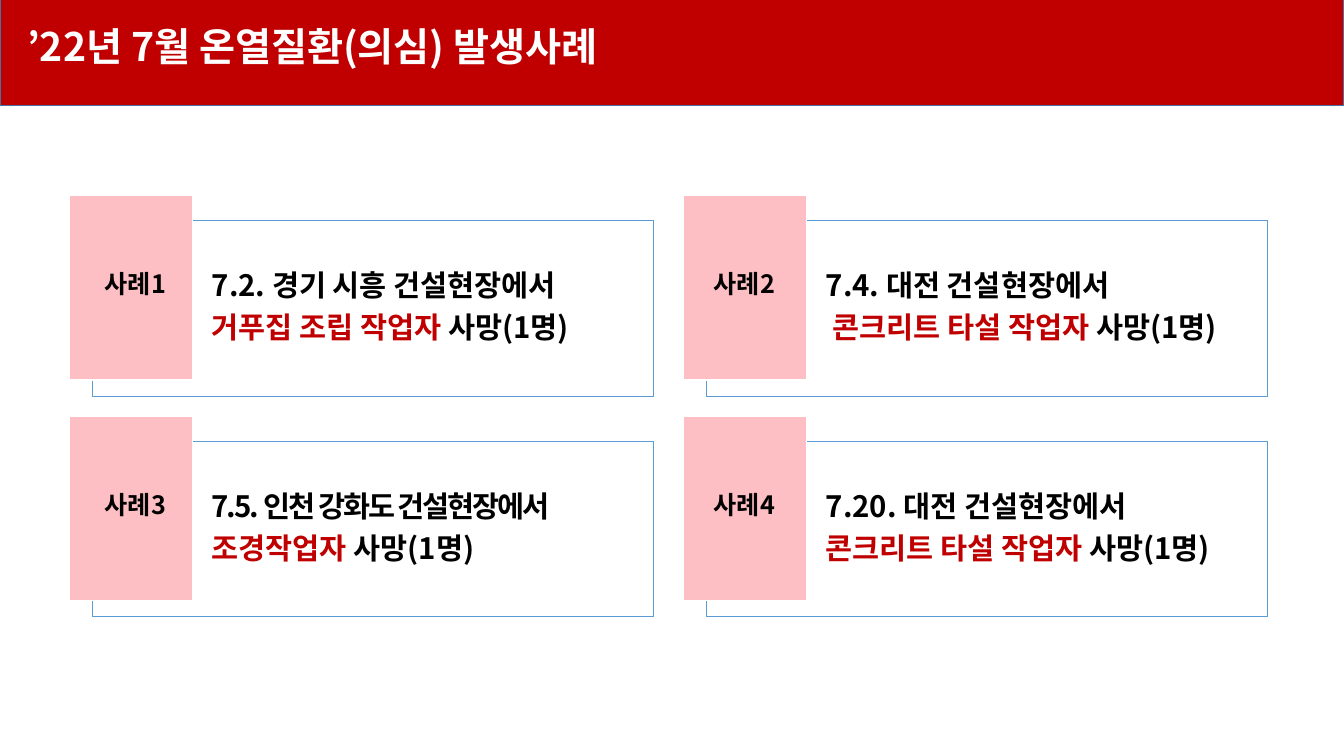
"""Build a slide of four heat illness cases in July 2022."""
from lxml.etree import SubElement as Sub
from pptx import Presentation
from pptx.dml.color import RGBColor as Rgb
from pptx.enum.shapes import MSO_SHAPE as Kind
from pptx.enum.text import MSO_ANCHOR as Anchor, PP_ALIGN as Align
from pptx.oxml.ns import qn
from pptx.util import Inches as In, Pt

HUE = {"red": "C00000", "pink": "FDBFC3", "blue": "5B9BD5",
       "navy": "43739E", "white": "FFFFFF", "black": "000000"}
FONT = "Noto Sans CJK KR"
CASES = [
    ("7.2. 경기 시흥 건설현장에서", "거푸집 조립 작업자 ", "사망(1명)", 0, 0),
    ("7.4. 대전 건설현장에서", "콘크리트 타설 작업자 ", "사망(1명)", 0.07, 0),
    ("7.5. 인천 강화도 건설현장에서", "조경작업자", " 사망(1명)", 0, -150),
    ("7.20. 대전 건설현장에서", "콘크리트 타설 작업자 ", "사망(1명)", 0, 0),
]
LEFT, TOP = 0.69, 1.94
COL, ROW = 6.09, 2.19


def style(run, size, hue):
    """Set the font, size and colour of a run."""
    font = run.font
    font.name, font.size, font.bold = FONT, Pt(size), True
    font.color.rgb = Rgb.from_string(HUE[hue])
    Sub(run._r.rPr, qn("a:ea")).set("typeface", FONT)


def paint(shape, fill, line, width):
    """Set the fill and outline of a shape."""
    shape.fill.solid()
    shape.fill.fore_color.rgb = Rgb.from_string(HUE[fill])
    shape.line.color.rgb = Rgb.from_string(HUE[line])
    shape.line.width = Pt(width)


deck = Presentation()
deck.slide_width, deck.slide_height = In(13.33), In(7.5)
slide = deck.slides.add_slide(deck.slide_layouts[5])
shapes = slide.shapes

title = shapes.title
title.left, title.top, title.width, title.height = In(0), In(-0.08), In(13.33), In(1.13)
paint(title, "red", "navy", 1)
frame = title.text_frame
frame.text = "’22년 7월 온열질환(의심) 발생사례"
frame.vertical_anchor = Anchor.MIDDLE
frame.margin_left = In(0.27)
head = frame.paragraphs[0]
head.alignment, head.line_spacing, head.space_before = Align.LEFT, 0.9, Pt(0)
style(head.runs[0], 28, "white")

for num, (place, work, end, indent, spread) in enumerate(CASES):
    row, col = divmod(num, 2)
    left, top = LEFT + col * COL, TOP + row * ROW

    card = shapes.add_shape(Kind.RECTANGLE, In(left + 0.23), In(top + 0.25), In(5.56), In(1.74))
    card.shadow.inherit = False
    paint(card, "white", "blue", 0.5)
    frame = card.text_frame
    frame.word_wrap, frame.vertical_anchor = True, Anchor.MIDDLE
    frame.margin_left, frame.margin_right = In(1.18), In(0.09)
    frame.margin_top = frame.margin_bottom = In(0.09)
    first, second = frame.paragraphs[0], frame.add_paragraph()
    first.text = place
    for part in (work, end):
        second.add_run().text = part
    for para in (first, second):
        para.alignment, para.line_spacing = Align.LEFT, 0.9
        after = Sub(para._p.pPr, qn("a:spcAft"))
        Sub(after, qn("a:spcPct")).set("val", "35000")
    second._p.pPr.set("marL", str(In(indent)))
    for run, hue in zip(first.runs + second.runs, ("black", "red", "black")):
        style(run, 21, hue)
    first.runs[0]._r.rPr.set("spc", str(spread))

    tile = shapes.add_shape(Kind.RECTANGLE, In(left), In(top), In(1.22), In(1.83))
    tile.shadow.inherit = False
    paint(tile, "pink", "white", 1)

    label = shapes.add_textbox(In(0.94 + col * 6.04), In(2.61 + row * 2.2), In(1.11), In(0.4))
    label.text_frame.word_wrap = True
    label.text_frame.text = f"사례{num + 1}"
    style(label.text_frame.paragraphs[0].runs[0], 18, "black")

deck.save("out.pptx")
